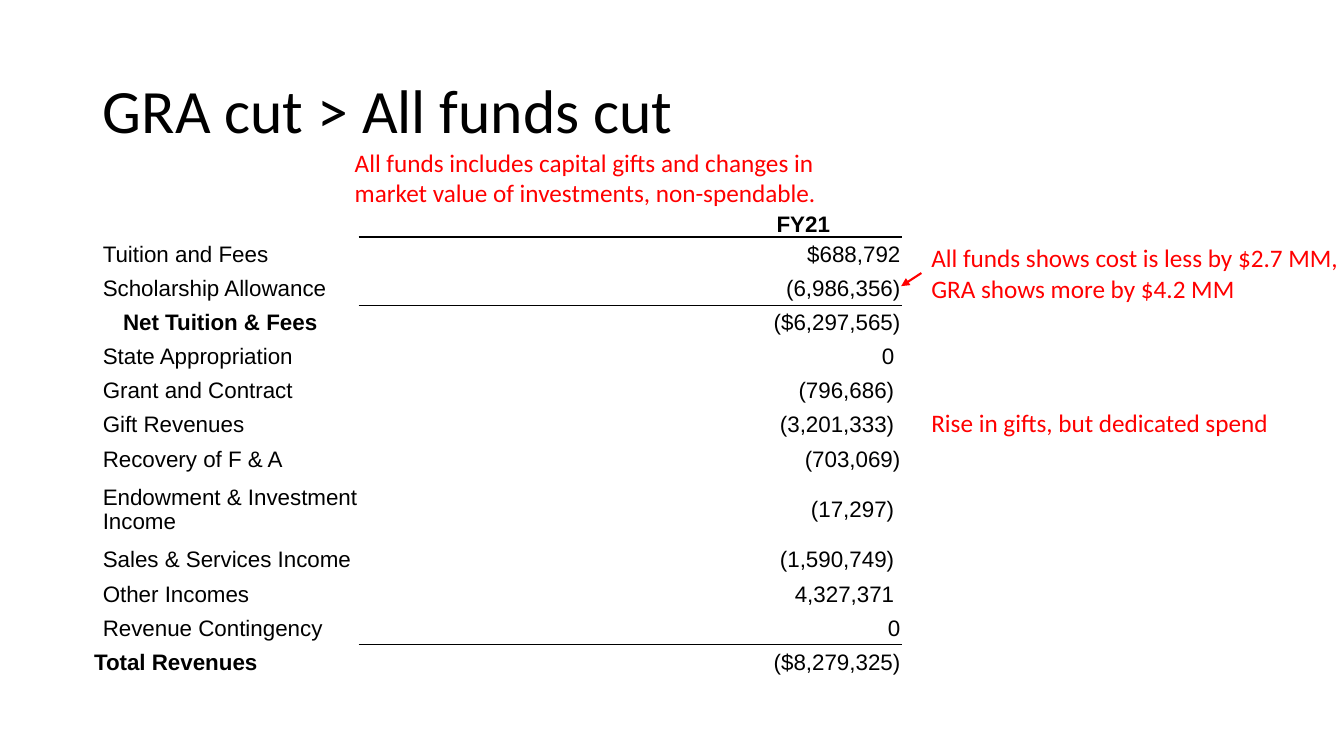
import pptx
import pptx.util
import pptx.oxml
import pptx.dml.color
import pptx.enum.text
import pptx.enum.shapes

Cm = pptx.util.Cm
Pt = pptx.util.Pt
ALIGN = pptx.enum.text.PP_ALIGN
ANCHOR = pptx.enum.text.MSO_ANCHOR
NAMESPACE = 'xmlns:a="http://schemas.openxmlformats.org/drawingml/2006/main"'

COLORS = {"ink": "000000", "note": "FF0000", "paper": "FFFFFF"}

# Label, amount, label indent in cm (totals are bold and indented differently)
REVENUES = [
    ("Tuition and Fees", "$688,792", 0.25),
    ("Scholarship Allowance", "(6,986,356)", 0.25),
    ("Net Tuition & Fees", "($6,297,565)", 0.76),
    ("State Appropriation", "0 ", 0.25),
    ("Grant and Contract", "(796,686) ", 0.25),
    ("Gift Revenues", "(3,201,333) ", 0.25),
    ("Recovery of F & A", "(703,069)", 0.25),
    ("Endowment & Investment Income", "(17,297) ", 0.25),
    ("Sales & Services Income", "(1,590,749) ", 0.25),
    ("Other Incomes", "4,327,371 ", 0.25),
    ("Revenue Contingency", "0", 0.25),
    ("Total Revenues", "($8,279,325)", 0.03),
]
TOTALS = ("Net Tuition & Fees", "Total Revenues")
COLUMN_WIDTHS = (6.71, 3.84, 4.88, 4.95)
ROW_HEIGHTS = [1.47] + [0.86] * 7 + [1.68] + [0.86] * 4
RULED_ROWS = (0, 2, 11)  # rows with a rule along their bottom edge


def rgb(name):
    return pptx.dml.color.RGBColor.from_string(COLORS[name])


def write(frame, text, size=16, font="Arial", color="ink", bold=False,
          align=ALIGN.LEFT, spacing=None):
    para = frame.paragraphs[0]
    para.alignment = align
    para.line_spacing = spacing
    span = para.add_run()
    span.text = text
    span.font.size = Pt(size)
    span.font.name = font
    span.font.bold = bold
    span.font.color.rgb = rgb(color)


class SlideBuilder:
    def __init__(self, deck):
        self.page = deck.slides.add_slide(deck.slide_layouts[5])
        self.shapes = self.page.shapes

    def title(self, text, left, top, width, height):
        box = self.shapes.title
        box.left, box.top, box.width, box.height = map(Cm, (left, top, width, height))
        box.text_frame.vertical_anchor = ANCHOR.MIDDLE
        write(box.text_frame, text, size=44, font="Calibri", spacing=0.9)

    def note(self, text, left, top, width, height):
        box = self.shapes.add_textbox(*map(Cm, (left, top, width, height)))
        box.text_frame.word_wrap = True
        box.text_frame.auto_size = pptx.enum.text.MSO_AUTO_SIZE.SHAPE_TO_FIT_TEXT
        write(box.text_frame, text, size=18, font="Calibri", color="note")

    def arrow(self, *ends):
        line = self.shapes.add_connector(
            pptx.enum.shapes.MSO_CONNECTOR.STRAIGHT, *map(Cm, ends))
        line.line.color.rgb = rgb("note")
        line.line.width = Pt(1.5)
        line.line._get_or_add_ln().append(
            pptx.oxml.parse_xml(f'<a:tailEnd {NAMESPACE} type="triangle"/>'))
        line._element.spPr.append(pptx.oxml.parse_xml(f"<a:effectLst {NAMESPACE}/>"))

    def rule(self, cell, edge):
        cell._tc.get_or_add_tcPr().insert(0, pptx.oxml.parse_xml(
            f'<a:{edge} {NAMESPACE} w="12700"><a:solidFill>'
            f'<a:srgbClr val="{COLORS["ink"]}"/></a:solidFill></a:{edge}>'))

    def revenue_table(self, left, top):
        table = self.shapes.add_table(
            len(ROW_HEIGHTS), len(COLUMN_WIDTHS), Cm(left), Cm(top),
            Cm(sum(COLUMN_WIDTHS)), Cm(sum(ROW_HEIGHTS))).table
        table.first_row = table.horz_banding = False
        for column, width in zip(table.columns, COLUMN_WIDTHS):
            column.width = Cm(width)
        for row, height in zip(table.rows, ROW_HEIGHTS):
            row.height = Cm(height)

        # Cell background, insets and rules
        for r, row in enumerate(table.rows):
            for c, cell in enumerate(row.cells):
                cell.fill.solid()
                cell.fill.fore_color.rgb = rgb("paper")
                cell.margin_left = cell.margin_right = cell.margin_top = Cm(0.03)
                cell.margin_bottom = 0
                cell.vertical_anchor = ANCHOR.MIDDLE
                if c > 0 and r in RULED_ROWS:
                    self.rule(cell, "lnB")
                if c > 0 and r - 1 in RULED_ROWS:
                    self.rule(cell, "lnT")

        # Header and revenue lines
        header = table.cell(0, 3)
        header.vertical_anchor = ANCHOR.BOTTOM
        write(header.text_frame, "FY21", bold=True, align=ALIGN.CENTER)
        for r, (label, amount, indent) in enumerate(REVENUES, start=1):
            name = table.cell(r, 0)
            name.margin_left = Cm(indent)
            write(name.text_frame, label, bold=label in TOTALS)
            write(table.cell(r, 3).text_frame, amount, align=ALIGN.RIGHT)


def main():
    deck = pptx.Presentation()
    deck.slide_width, deck.slide_height = Cm(33.87), Cm(19.05)
    builder = SlideBuilder(deck)

    # Title and table
    builder.title("GRA cut > All funds cut", 2.34, 1.02, 29.21, 3.68)
    builder.revenue_table(2.34, 4.5)

    # Red remarks
    builder.note("All funds includes capital gifts and changes in market value "
                 "of investments, non-spendable.", 8.69, 3.58, 14.02, 1.8)
    builder.note("All funds shows cost is less by $2.7 MM, GRA shows more by $4.2 MM",
                 23.22, 5.99, 10.77, 1.8)
    builder.arrow(23.22, 6.88, 22.71, 7.21)
    builder.note("Rise in gifts, but dedicated spend", 23.22, 10.13, 10.77, 1.02)

    deck.save("out.pptx")


if __name__ == "__main__":
    main()
